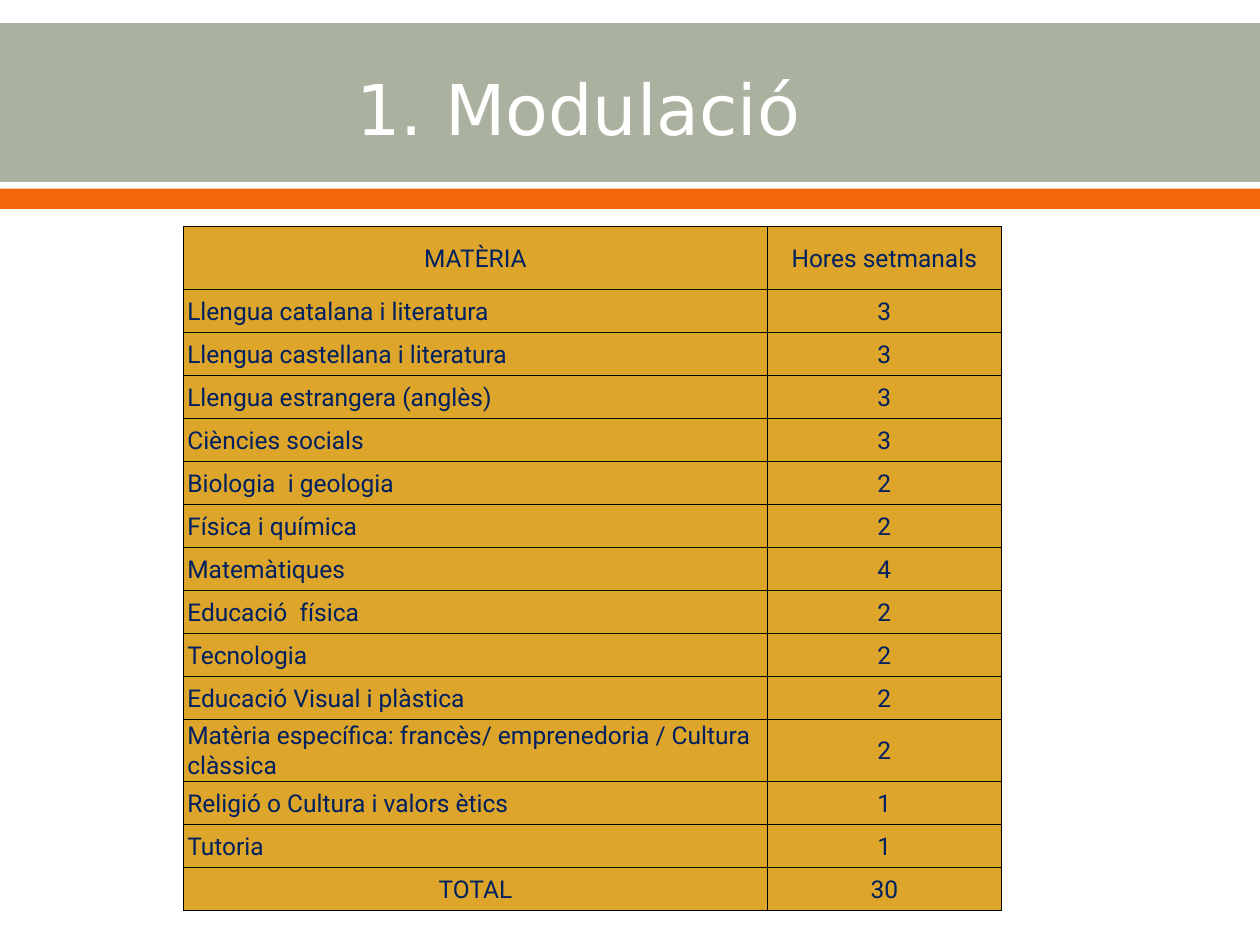
from lxml import etree
from pptx import Presentation
from pptx.dml.color import RGBColor
from pptx.enum import shapes, text
from pptx.oxml import ns
from pptx.util import Pt

WHITE = RGBColor(0xFF, 0xFF, 0xFF)
SAGE = RGBColor(0xAB, 0xB1, 0x9F)
ORANGE = RGBColor(0xF4, 0x68, 0x0B)
GOLD = RGBColor(0xDD, 0xA5, 0x29)
NAVY = RGBColor(0x00, 0x20, 0x60)
BLACK = RGBColor(0x00, 0x00, 0x00)

HEADINGS = ("MATÈRIA", "Hores setmanals")
SUBJECTS = [
    ("Llengua catalana i literatura", 3),
    ("Llengua castellana i literatura", 3),
    ("Llengua estrangera (anglès)", 3),
    ("Ciències socials", 3),
    ("Biologia  i geologia", 2),
    ("Física i química", 2),
    ("Matemàtiques", 4),
    ("Educació  física", 2),
    ("Tecnologia", 2),
    ("Educació Visual i plàstica", 2),
    ("Matèria específica: francès/ emprenedoria / Cultura clàssica", 2),
    ("Religió o Cultura i valors ètics", 1),
    ("Tutoria", 1),
]
TOTAL = ("TOTAL", sum(hours for _, hours in SUBJECTS))

COLUMN_SHARES = (5 / 7, 2 / 7)
HEADER_HEIGHT = 36
TWO_LINE_HEIGHT = 35.4
LINE_LIMIT = 50


def add_band(page, left, top, width, height, color):
    band = page.shapes.add_shape(
        shapes.MSO_SHAPE.RECTANGLE, Pt(left), Pt(top), Pt(width), Pt(height))
    band.shadow.inherit = False
    band.fill.solid()
    band.fill.fore_color.rgb = color
    band.line.fill.background()


def style_text(paragraph, font_name, size, color):
    for span in paragraph.runs:
        span.font.name = font_name
        span.font.size = Pt(size)
        span.font.color.rgb = color


def add_title(page, left, top, width, height):
    box = page.shapes.add_textbox(Pt(left), Pt(top), Pt(width), Pt(height))
    frame = box.text_frame
    frame.word_wrap = True
    frame.auto_size = text.MSO_AUTO_SIZE.SHAPE_TO_FIT_TEXT
    frame.text = "1. Modulació"
    style_text(frame.paragraphs[0], "DejaVu Sans", 40, WHITE)


def add_borders(cell):
    properties = cell._tc.get_or_add_tcPr()
    for position, side in enumerate(("lnL", "lnR", "lnT", "lnB")):
        line = etree.Element(ns.qn(f"a:{side}"), w=str(Pt(0.06)))
        fill = etree.SubElement(line, ns.qn("a:solidFill"))
        etree.SubElement(fill, ns.qn("a:srgbClr"), val=str(BLACK))
        properties.insert(position, line)


def fill_cell(cell, value, centred):
    cell.margin_left = cell.margin_right = Pt(2.25)
    cell.margin_top = cell.margin_bottom = 0
    cell.vertical_anchor = text.MSO_ANCHOR.MIDDLE
    cell.fill.solid()
    cell.fill.fore_color.rgb = GOLD
    cell.text_frame.text = str(value)
    paragraph = cell.text_frame.paragraphs[0]
    paragraph.line_spacing = 1.05
    paragraph.alignment = text.PP_ALIGN.CENTER if centred else text.PP_ALIGN.LEFT
    style_text(paragraph, "Roboto", 14, NAVY)
    add_borders(cell)


def add_hours_table(page, left, top, width, height):
    rows = [HEADINGS, *SUBJECTS, TOTAL]
    table = page.shapes.add_table(
        len(rows), 2, Pt(left), Pt(top), Pt(width), Pt(height)).table
    table.first_row = table.horz_banding = False
    for column, share in zip(table.columns, COLUMN_SHARES):
        column.width = Pt(width * share)
    line_height = (height - HEADER_HEIGHT - TWO_LINE_HEIGHT) / (len(rows) - 2)
    for index, values in enumerate(rows):
        if index == 0:
            row_height = HEADER_HEIGHT
        elif len(values[0]) > LINE_LIMIT:
            row_height = TWO_LINE_HEIGHT
        else:
            row_height = line_height
        table.rows[index].height = Pt(row_height)
        is_subject = 0 < index < len(rows) - 1
        for column, value in enumerate(values):
            fill_cell(table.cell(index, column), value,
                      centred=column == 1 or not is_subject)


def main():
    deck = Presentation()
    deck.slide_width, deck.slide_height = Pt(720), Pt(540)
    page = deck.slides.add_slide(deck.slide_layouts[6])
    add_band(page, 0, 13.2, 720, 90.8, SAGE)
    add_band(page, 0, 107.8, 720, 11.6, ORANGE)
    add_hours_table(page, 104.8, 129.4, 467.3, 391.2)
    add_title(page, 196.6, 33.8, 270, 55.4)
    deck.save("out.pptx")


if __name__ == "__main__":
    main()
